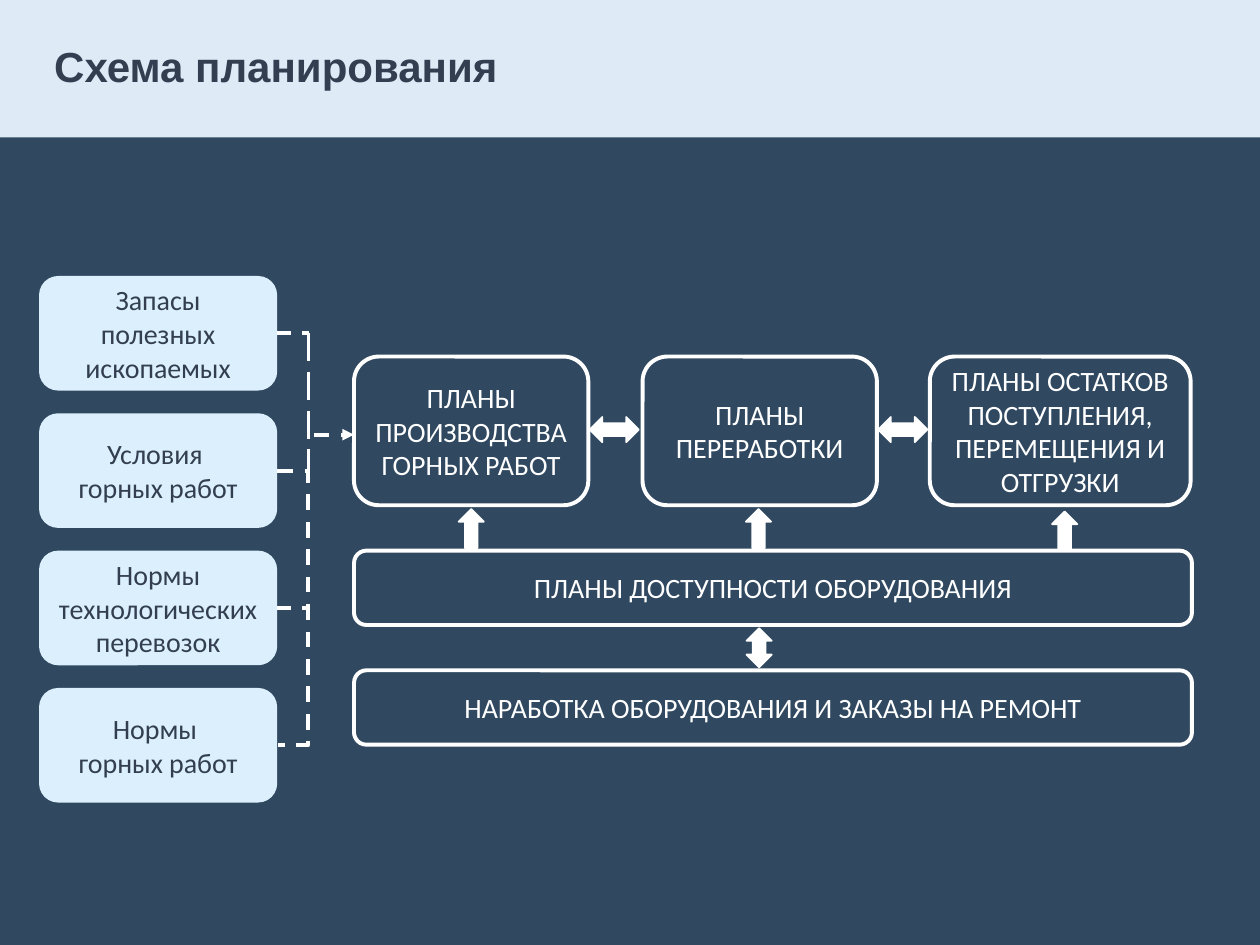
from dataclasses import dataclass

from lxml import etree
from pptx import Presentation
from pptx.dml.color import RGBColor
from pptx.enum.dml import MSO_LINE
from pptx.enum.shapes import MSO_CONNECTOR, MSO_SHAPE
from pptx.enum.text import MSO_ANCHOR, PP_ALIGN
from pptx.oxml.ns import qn
from pptx.shapes.autoshape import Shape
from pptx.shapes.connector import Connector
from pptx.slide import Slide
from pptx.util import Inches, Pt

RECT = MSO_SHAPE.RECTANGLE
ROUND_RECT = MSO_SHAPE.ROUNDED_RECTANGLE
UP_ARROW = MSO_SHAPE.UP_ARROW
TWO_WAY_ARROW = MSO_SHAPE.LEFT_RIGHT_ARROW
STRAIGHT, ELBOW = MSO_CONNECTOR.STRAIGHT, MSO_CONNECTOR.ELBOW
DASH, LONG_DASH = MSO_LINE.DASH, MSO_LINE.LONG_DASH
LEFT, CENTER = PP_ALIGN.LEFT, PP_ALIGN.CENTER
MIDDLE = MSO_ANCHOR.MIDDLE
RIGHT_SITE = 3


@dataclass(frozen=True)
class Theme:
    background: RGBColor = RGBColor.from_string("304961")
    band: RGBColor = RGBColor.from_string("DEEBF7")
    input_fill: RGBColor = RGBColor.from_string("DBF0FC")
    dark_text: RGBColor = RGBColor.from_string("333F50")
    white: RGBColor = RGBColor.from_string("FFFFFF")
    title_font: str = "Arial"
    body_font: str = "Calibri"
    title_size: float = 24
    body_size: float = 16
    outline: float = 2.25
    thin_dash: float = 2
    arrow_outline: float = 1


@dataclass(frozen=True)
class Box:
    text: str
    left: float
    top: float
    width: float
    height: float


@dataclass(frozen=True)
class Arrow:
    kind: MSO_SHAPE
    left: float
    top: float
    width: float
    height: float
    rotation: float = 0


THEME = Theme()
INPUT_LEFT, INPUT_TOP, INPUT_STEP = 0.31, 2.19, 1.09
INPUT_WIDTH, INPUT_HEIGHT = 1.89, 0.91
INPUT_RIGHT = INPUT_LEFT + INPUT_WIDTH
TRUNK = 2.45
PLAN_LEFT, PLAN_TOP, PLAN_HEIGHT = 2.81, 2.83, 1.18
WIDE_WIDTH, WIDE_HEIGHT = 6.65, 0.59

INPUT_TEXTS = [
    "Запасы полезных ископаемых",
    "Условия \vгорных работ",
    "Нормы технологических перевозок",
    "Нормы \vгорных работ",
]
INPUTS = [
    Box(text, INPUT_LEFT, INPUT_TOP + row * INPUT_STEP, INPUT_WIDTH, INPUT_HEIGHT)
    for row, text in enumerate(INPUT_TEXTS)
]
PLANS = [
    Box("ПЛАНЫ ПРОИЗВОДСТВА ГОРНЫХ РАБОТ", PLAN_LEFT, PLAN_TOP, 1.86, PLAN_HEIGHT),
    Box("ПЛАНЫ ПЕРЕРАБОТКИ", 5.1, PLAN_TOP, 1.86, PLAN_HEIGHT),
    Box("ПЛАНЫ ОСТАТКОВ ПОСТУПЛЕНИЯ, ПЕРЕМЕЩЕНИЯ И ОТГРУЗКИ",
        7.38, PLAN_TOP, 2.07, PLAN_HEIGHT),
    Box("ПЛАНЫ ДОСТУПНОСТИ ОБОРУДОВАНИЯ", PLAN_LEFT, 4.37, WIDE_WIDTH, WIDE_HEIGHT),
    Box("НАРАБОТКА ОБОРУДОВАНИЯ И ЗАКАЗЫ НА РЕМОНТ",
        PLAN_LEFT, 5.32, WIDE_WIDTH, WIDE_HEIGHT),
]
ARROWS = [
    Arrow(UP_ARROW, 3.64, 4.04, 0.2, 0.31),
    Arrow(UP_ARROW, 5.92, 4.04, 0.2, 0.31),
    Arrow(UP_ARROW, 8.35, 4.06, 0.2, 0.31),
    Arrow(TWO_WAY_ARROW, 4.68, 3.31, 0.39, 0.2),
    Arrow(TWO_WAY_ARROW, 6.97, 3.31, 0.39, 0.2),
    Arrow(TWO_WAY_ARROW, 5.87, 5.04, 0.31, 0.2, 270),
]


def middle(box: Box) -> float:
    return box.top + box.height / 2


def set_text(shape: Shape, text: str, font_name: str, size: float,
             color: RGBColor, align: PP_ALIGN, bold: bool = False) -> None:
    frame = shape.text_frame
    frame.text = text
    frame.word_wrap = True
    frame.vertical_anchor = MIDDLE
    for paragraph in frame.paragraphs:
        paragraph.alignment = align
        for run in paragraph.runs:
            run.font.name = font_name
            run.font.size = Pt(size)
            run.font.bold = bold
            run.font.color.rgb = color


def add_filled(slide: Slide, kind: MSO_SHAPE, left: float, top: float,
               width: float, height: float, fill: RGBColor,
               outline: float = 0) -> Shape:
    shape = slide.shapes.add_shape(
        kind, Inches(left), Inches(top), Inches(width), Inches(height))
    shape.shadow.inherit = False
    shape.fill.solid()
    shape.fill.fore_color.rgb = fill
    if outline:
        shape.line.color.rgb = THEME.white
        shape.line.width = Pt(outline)
    else:
        shape.line.fill.background()
    return shape


def add_box(slide: Slide, box: Box, fill: RGBColor, text_color: RGBColor,
            outline: float = 0) -> Shape:
    shape = add_filled(slide, ROUND_RECT, box.left, box.top, box.width,
                       box.height, fill, outline)
    set_text(shape, box.text, THEME.body_font, THEME.body_size, text_color, CENTER)
    return shape


def add_arrow(slide: Slide, arrow: Arrow) -> None:
    shape = add_filled(slide, arrow.kind, arrow.left, arrow.top, arrow.width,
                       arrow.height, THEME.white, THEME.arrow_outline)
    shape.rotation = arrow.rotation
    if arrow.kind == TWO_WAY_ARROW:
        shape.adjustments[0] = 0.51


def add_link(slide: Slide, x1: float, y1: float, x2: float, y2: float,
             width: float, dash: MSO_LINE = DASH,
             kind: MSO_CONNECTOR = STRAIGHT) -> Connector:
    link = slide.shapes.add_connector(
        kind, Inches(x1), Inches(y1), Inches(x2), Inches(y2))
    link.line.color.rgb = THEME.white
    link.line.width = Pt(width)
    link.line.dash_style = dash
    etree.SubElement(link._element.spPr, qn("a:effectLst"))
    return link


def add_title(slide: Slide) -> None:
    title = slide.shapes.title
    band = add_filled(slide, RECT, 0, 0, 10, 1.09, THEME.band)
    title._element.addprevious(band._element)
    title.left, title.top = Inches(0.33), Inches(0.16)
    title.width, title.height = Inches(6.06), Inches(0.78)
    set_text(title, "Схема планирования", THEME.title_font, THEME.title_size,
             THEME.dark_text, LEFT, bold=True)
    title.text_frame.paragraphs[0].line_spacing = 0.9


def add_input_links(slide: Slide, input_shapes: list[Shape]) -> None:
    for row in (0, 2):
        y = middle(INPUTS[row])
        branch = add_link(slide, INPUT_RIGHT, y, TRUNK, y, THEME.thin_dash)
        branch.begin_connect(input_shapes[row], RIGHT_SITE)
    first, second, last = (middle(INPUTS[row]) for row in (0, 1, 3))
    add_link(slide, TRUNK, first, TRUNK, second, THEME.thin_dash, LONG_DASH)

    span = 0.01
    bracket = add_link(slide, INPUT_RIGHT, second, INPUT_RIGHT + span, last,
                       THEME.outline, kind=ELBOW)
    guides = bracket._element.spPr.find(qn("a:prstGeom")).get_or_add_avLst()
    bend = round((TRUNK - INPUT_RIGHT) / span * 100000)
    etree.SubElement(guides, qn("a:gd"), name="adj1", fmla=f"val {bend}")

    pointer = add_link(slide, 2.49, 3.45, PLAN_LEFT, 3.45, THEME.outline)
    etree.SubElement(pointer.line._get_or_add_ln(), qn("a:tailEnd"), type="triangle")


def main() -> None:
    deck = Presentation()
    deck.slide_width, deck.slide_height = Inches(10), Inches(7.5)
    slide = deck.slides.add_slide(deck.slide_layouts[5])
    slide.background.fill.solid()
    slide.background.fill.fore_color.rgb = THEME.background
    add_title(slide)
    for plan in PLANS:
        add_box(slide, plan, THEME.background, THEME.white, THEME.outline)
    input_shapes = [add_box(slide, item, THEME.input_fill, THEME.dark_text)
                    for item in INPUTS]
    add_input_links(slide, input_shapes)
    for arrow in ARROWS:
        add_arrow(slide, arrow)
    deck.save("out.pptx")


if __name__ == "__main__":
    main()
